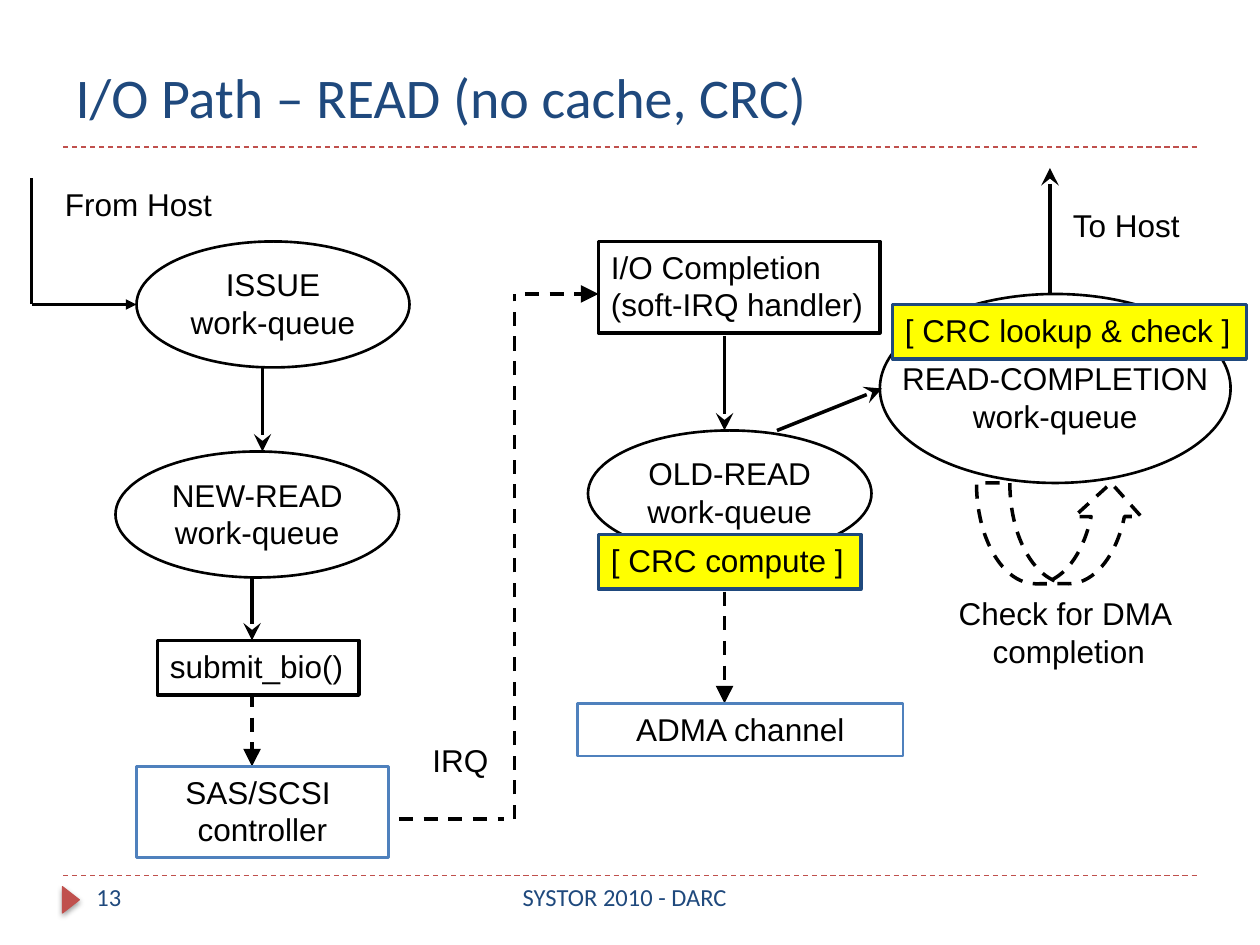
from dataclasses import dataclass

from lxml import etree
from pptx import Presentation
from pptx.dml.color import RGBColor
from pptx.enum.dml import MSO_LINE
from pptx.enum.shapes import MSO_CONNECTOR, MSO_SHAPE
from pptx.enum.text import MSO_ANCHOR, PP_ALIGN
from pptx.oxml import parse_xml
from pptx.oxml.ns import qn
from pptx.util import Inches, Pt

LEFT, CENTER = PP_ALIGN.LEFT, PP_ALIGN.CENTER
TOP, BOTTOM = MSO_ANCHOR.TOP, MSO_ANCHOR.BOTTOM
STRAIGHT = MSO_CONNECTOR.STRAIGHT
DASH = MSO_LINE.DASH
RECTANGLE, ELLIPSE = MSO_SHAPE.RECTANGLE, MSO_SHAPE.OVAL
TRIANGLE, LOOP = MSO_SHAPE.ISOSCELES_TRIANGLE, MSO_SHAPE.CURVED_UP_ARROW
COLUMNS, ROWS, CELLS_PER_INCH = 120, 90, 12
ONE_LINE, TWO_LINES = 5.2, 8.7
SHADOW = (
    '<a:effectLst xmlns:a="http://schemas.openxmlformats.org/drawingml/2006/main">'
    '<a:outerShdw blurRad="40000" dist="20000" dir="5400000" rotWithShape="0">'
    '<a:srgbClr val="000000"><a:alpha val="38000"/></a:srgbClr>'
    '</a:outerShdw></a:effectLst>'
)


@dataclass(frozen=True)
class Theme:
    """Colours, fonts and sizes of the slide."""
    ink: RGBColor = RGBColor(0, 0, 0)
    navy: RGBColor = RGBColor(0x1F, 0x49, 0x7D)
    blue: RGBColor = RGBColor(0x4F, 0x81, 0xBD)
    red: RGBColor = RGBColor(0xC0, 0x50, 0x4D)
    yellow: RGBColor = RGBColor(0xFF, 0xFF, 0)
    heading_font: str = "Calibri"
    body_font: str = "Arial"
    title: float = 32
    body: float = 18
    footer: float = 14
    hairline: float = 0.75
    thin: float = 1.5
    thick: float = 2


THEME = Theme()


def cells(count):
    """Convert grid cells to a length."""
    return Inches(count / CELLS_PER_INCH)


def write(frame, text, align=LEFT, anchor=TOP, wrap=False,
          font=THEME.body_font, size=THEME.body, color=THEME.ink):
    """Fill a text frame, one paragraph for each line."""
    frame.text = text
    frame.word_wrap = wrap
    frame.vertical_anchor = anchor
    for paragraph in frame.paragraphs:
        paragraph.alignment = align
        paragraph.font.name = font
        paragraph.font.size = Pt(size)
        paragraph.font.color.rgb = color


class Region:
    """A part of the slide whose contents are placed from its own corner."""

    def __init__(self, slide, column, row):
        self.shapes = slide.shapes
        self.column, self.row = column, row

    def place(self, column, row):
        """Return slide coordinates of a cell in the region."""
        return cells(self.column + column), cells(self.row + row)

    def label(self, column, row, width, height, text, **style):
        """Add free-standing text."""
        box = self.shapes.add_textbox(
            *self.place(column, row), cells(width), cells(height))
        write(box.text_frame, text, **style)

    def outline(self, kind, column, row, width, height,
                color=THEME.ink, weight=THEME.thick, fill=None):
        """Add a preset shape with an outline and optional fill."""
        shape = self.shapes.add_shape(
            kind, *self.place(column, row), cells(width), cells(height))
        shape.shadow.inherit = False
        shape.line.color.rgb = color
        shape.line.width = Pt(weight)
        if fill is None:
            shape.fill.background()
        else:
            shape.fill.solid()
            shape.fill.fore_color.rgb = fill
        return shape

    def box(self, column, row, width, height, text, align=LEFT, **look):
        """Add a rectangle holding text."""
        shape = self.outline(RECTANGLE, column, row, width, height, **look)
        write(shape.text_frame, text, align)

    def queue(self, column, row, width, height, name, text_width=20, drop=-0.1):
        """Add a work-queue ellipse with its centred name."""
        text_height = 8.4
        self.label(column + (width - text_width) / 2,
                   row + (height - text_height) / 2 + drop,
                   text_width, text_height, f"{name}\nwork-queue", align=CENTER)
        self.outline(ELLIPSE, column, row, width, height, weight=THEME.thin)

    def line(self, start, end, head=None, dashed=False,
             color=THEME.ink, weight=THEME.thick, head_size="lg"):
        """Add a straight line, with an arrowhead at its end if named."""
        connector = self.shapes.add_connector(
            STRAIGHT, *self.place(*start), *self.place(*end))
        connector.line.color.rgb = color
        connector.line.width = Pt(weight)
        if dashed:
            connector.line.dash_style = DASH
        if head:
            etree.SubElement(connector.line._get_or_add_ln(), qn("a:tailEnd"),
                             type=head, w=head_size, len=head_size)
        etree.SubElement(connector._element.spPr, qn("a:effectLst"))


def add_header(slide, region):
    """Place the title and the rule below it."""
    title = slide.shapes.title
    title.left, title.top = region.place(0, 0)
    title.width, title.height = cells(108), cells(10)
    write(title.text_frame, "I/O Path – READ (no cache, CRC)", anchor=BOTTOM,
          wrap=True, font=THEME.heading_font, size=THEME.title, color=THEME.navy)
    region.line((0, 11), (108, 11), dashed=True, color=THEME.red, weight=THEME.hairline)


def add_footer(region):
    """Place the rule, marker, page number and event name."""
    region.line((0, 0), (108, 0), dashed=True, color=THEME.red, weight=THEME.hairline)
    marker = region.outline(TRIANGLE, -0.5, 1.5, 2.5, 1.6, color=THEME.red,
                            weight=THEME.hairline, fill=THEME.red)
    marker.rotation = 90
    properties = marker._element.spPr
    properties.replace(properties.find(qn("a:effectLst")), parse_xml(SHADOW))
    style = dict(wrap=True, font=THEME.heading_font, size=THEME.footer, color=THEME.navy)
    region.label(2, 0, 26, 4.8, "13", **style)
    region.label(29, 0, 49, 4.8, "SYSTOR 2010 - DARC", align=CENTER, **style)


def add_issue_path(region):
    """Draw the path from the host down to the disk controller."""
    region.label(2, 0, 16.4, 4.8, "From Host")
    region.line((0, 0), (0, 12))
    region.line((0, 12), (10, 12), "triangle", head_size="med")
    region.queue(10, 6, 26, 12, "ISSUE")
    region.line((22, 18), (22, 26), "stealth")
    region.queue(8, 26, 27, 12, "NEW-READ")
    region.line((21, 38), (21, 44), "stealth")
    region.box(12, 44, 19.2, ONE_LINE, "submit_bio()")
    region.line((21, 49), (21, 56), "triangle", dashed=True)
    region.box(10, 56, 24, TWO_LINES, "SAS/SCSI \ncontroller", CENTER,
               color=THEME.blue, weight=THEME.thin)


def add_interrupt(region):
    """Draw the interrupt path from the controller to I/O completion."""
    region.line((0, 50), (10, 50), dashed=True)
    region.line((11, 50), (11, 0), dashed=True)
    region.line((12, 0), (19, 0), "triangle", dashed=True)
    region.label(2, 42, 7.8, 4.8, "IRQ")


def add_old_read_path(region):
    """Draw I/O completion, the old-read queue and the DMA channel."""
    region.box(2, 0, 26.8, TWO_LINES, "I/O Completion\n(soft-IRQ handler)")
    region.line((14, 9), (14, 18), "stealth")
    region.queue(1, 18, 27, 12, "OLD-READ")
    region.line((19, 18), (29, 14), "stealth")
    region.line((14, 31), (14, 44), "triangle", dashed=True)
    region.box(0, 44, 31, 5, "ADMA channel", CENTER,
               color=THEME.blue, weight=THEME.thin)
    region.box(2, 27.9, 25, ONE_LINE, "[ CRC compute ]",
               color=THEME.navy, fill=THEME.yellow)


def add_completion_path(region):
    """Draw the read-completion queue, its polling loop and the way to the host."""
    region.queue(0.8, 12, 33.4, 18, "READ-COMPLETION", text_width=39, drop=0.8)
    region.line((17, 12), (17, 0), "stealth")
    region.label(18, 3, 13, 4.8, "To Host")
    loop = region.outline(LOOP, 10, 30, 16, 9.6)
    loop.line.dash_style = DASH
    for index, share in enumerate((0.331, 0.662, 0.333)):
        loop.adjustments[index] = share
    region.label(7, 40, 23.6, 8.4, "Check for DMA \ncompletion", align=CENTER)
    region.box(2, 13, 33.7, ONE_LINE, "[ CRC lookup & check ]",
               color=THEME.navy, fill=THEME.yellow)


def main():
    """Build and save the slide."""
    deck = Presentation()
    deck.slide_width, deck.slide_height = cells(COLUMNS), cells(ROWS)
    slide = deck.slides.add_slide(deck.slide_layouts.get_by_name("Title Only"))
    add_header(slide, Region(slide, 6, 3))
    add_footer(Region(slide, 6, 83.4))
    add_issue_path(Region(slide, 3, 17))
    add_interrupt(Region(slide, 38, 28))
    add_old_read_path(Region(slide, 55, 23))
    add_completion_path(Region(slide, 83, 16))
    deck.save("out.pptx")


if __name__ == "__main__":
    main()
